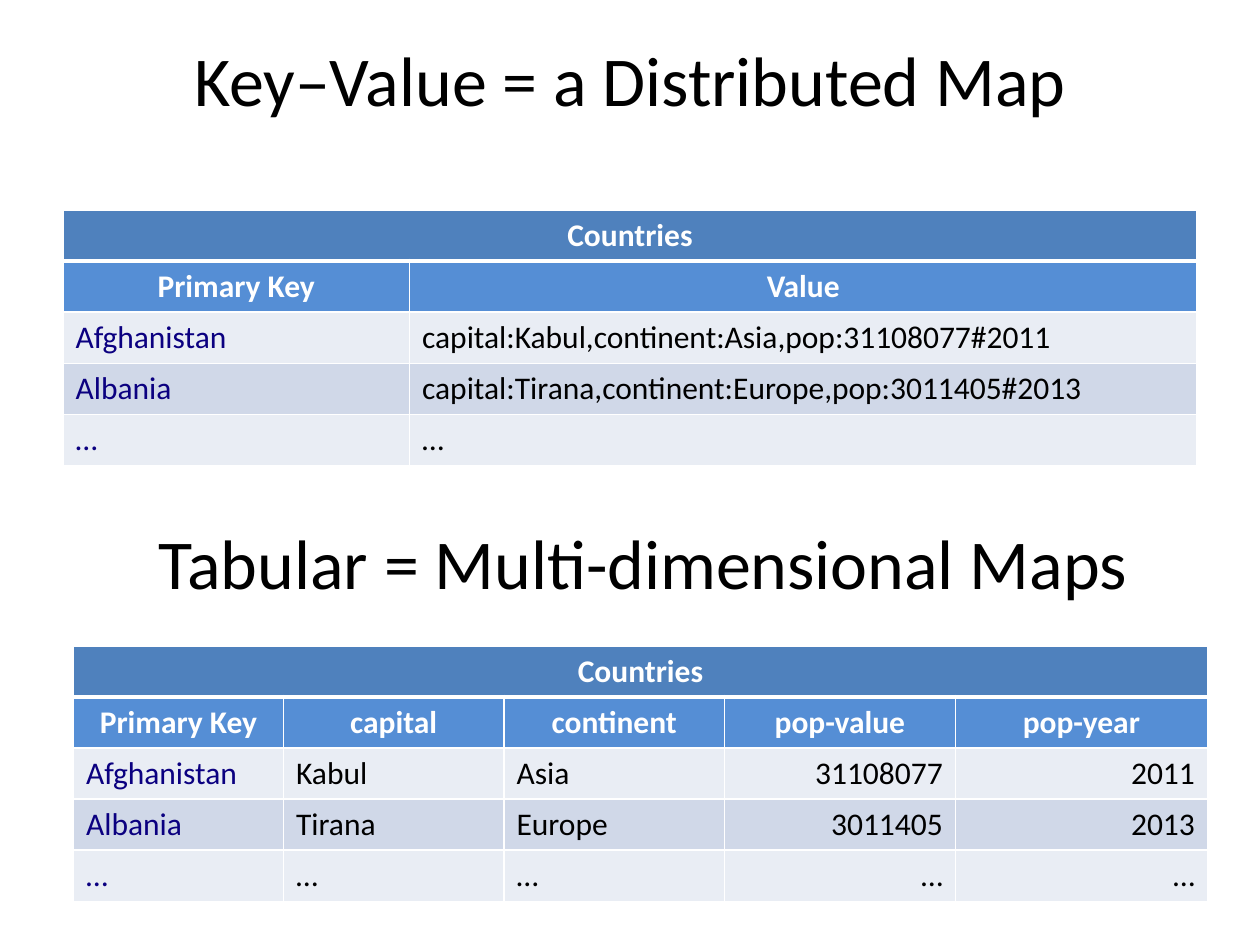
import pptx
import pptx.util
import pptx.dml.color
import pptx.enum.text
import pptx.oxml
import pptx.oxml.ns

RGBColor = pptx.dml.color.RGBColor
ALIGN = pptx.enum.text.PP_ALIGN
ANCHOR = pptx.enum.text.MSO_ANCHOR

BLACK = RGBColor(0x00, 0x00, 0x00)
WHITE = RGBColor(0xFF, 0xFF, 0xFF)
KEY_BLUE = RGBColor(0x0B, 0x00, 0x80)
NAME_FILL = RGBColor(0x4F, 0x81, 0xBD)
FIELD_FILL = RGBColor(0x55, 0x8E, 0xD5)
BAND_FILLS = (RGBColor(0xE9, 0xED, 0xF4), RGBColor(0xD0, 0xD8, 0xE8))

SLIDE_WIDTH = pptx.util.Inches(10)
SLIDE_HEIGHT = pptx.util.Inches(7.5)
GRID_COLUMNS, GRID_ROWS = 120, 90
ROW_HEIGHT = 4.87

HEADING_FONT = {"name": "Calibri", "size": pptx.util.Pt(40)}
CELL_FONT = {"name": "Calibri", "size": pptx.util.Pt(18)}


def across(columns):
    return round(SLIDE_WIDTH * columns / GRID_COLUMNS)


def down(rows):
    return round(SLIDE_HEIGHT * rows / GRID_ROWS)


def grid_box(left, top, width, height):
    return across(left), down(top), across(width), down(height)


def write(frame, text, font, color, align):
    paragraph = frame.paragraphs[0]
    paragraph.alignment = align
    run = paragraph.add_run()
    run.text = text
    for attribute, value in font.items():
        setattr(run.font, attribute, value)
    run.font.color.rgb = color


def place_heading(heading, box, text):
    for attribute, value in zip(("left", "top", "width", "height"), box):
        setattr(heading, attribute, value)
    frame = heading.text_frame
    frame.word_wrap = True
    frame.vertical_anchor = ANCHOR.MIDDLE
    write(frame, text, HEADING_FONT, BLACK, ALIGN.CENTER)


def draw_borders(cell, widths):
    properties = cell._tc.get_or_add_tcPr()
    for side, points in widths.items():
        properties.append(pptx.oxml.parse_xml(
            f'<a:ln{side} {pptx.oxml.ns.nsdecls("a")} w="{pptx.util.Pt(points)}">'
            f'<a:solidFill><a:srgbClr val="{WHITE}"/></a:solidFill></a:ln{side}>'))


def cell_format(row, column, aligns):
    if row < 2:
        return (NAME_FILL, FIELD_FILL)[row], WHITE, ALIGN.CENTER, ANCHOR.TOP
    ink = BLACK if column else KEY_BLUE
    return BAND_FILLS[row % 2], ink, aligns[column], ANCHOR.MIDDLE


def place_countries(slide, left, top, widths, aligns, fields, records):
    rows = [["Countries"] + [""] * (len(widths) - 1), fields, *records,
            ["…"] * len(widths)]
    box = grid_box(left, top, sum(widths), ROW_HEIGHT * len(rows))
    countries = slide.shapes.add_table(len(rows), len(widths), *box).table
    for column, width in zip(countries.columns, widths):
        column.width = across(width)
    for line in countries.rows:
        line.height = down(ROW_HEIGHT)
    countries.cell(0, 0).merge(countries.cell(0, len(widths) - 1))
    for row, texts in enumerate(rows):
        for column, text in enumerate(texts):
            cell = countries.cell(row, column)
            fill, ink, align, anchor = cell_format(row, column, aligns)
            draw_borders(cell, {"L": 1, "R": 1, "T": 3 if row == 1 else 1,
                                "B": 3 if row == 0 else 1})
            cell.fill.solid()
            cell.fill.fore_color.rgb = fill
            cell.vertical_anchor = anchor
            if text:
                write(cell.text_frame, text, {**CELL_FONT, "bold": row < 2},
                      ink, align)


def main():
    deck = pptx.Presentation()
    deck.slide_width, deck.slide_height = SLIDE_WIDTH, SLIDE_HEIGHT
    slide = deck.slides.add_slide(deck.slide_layouts[5])

    place_heading(slide.shapes.title, grid_box(6, 0, 108, 15),
                  "Key–Value = a Distributed Map")
    place_countries(
        slide, 6, 20, (33, 75), (ALIGN.LEFT,) * 2,
        ["Primary Key", "Value"],
        [["Afghanistan", "capital:Kabul,continent:Asia,pop:31108077#2011"],
         ["Albania", "capital:Tirana,continent:Europe,pop:3011405#2013"]])

    tabular_box = grid_box(8, 46, 108, 15)
    place_heading(slide.shapes.add_textbox(*tabular_box), tabular_box,
                  "Tabular = Multi-dimensional Maps ")
    place_countries(
        slide, 7, 61.5, (20, 21, 21, 22, 24),
        (ALIGN.LEFT,) * 3 + (ALIGN.RIGHT,) * 2,
        ["Primary Key", "capital", "continent", "pop-value", "pop-year"],
        [["Afghanistan", "Kabul", "Asia", "31108077", "2011"],
         ["Albania", "Tirana", "Europe", "3011405", "2013"]])

    deck.save("out.pptx")


if __name__ == "__main__":
    main()
